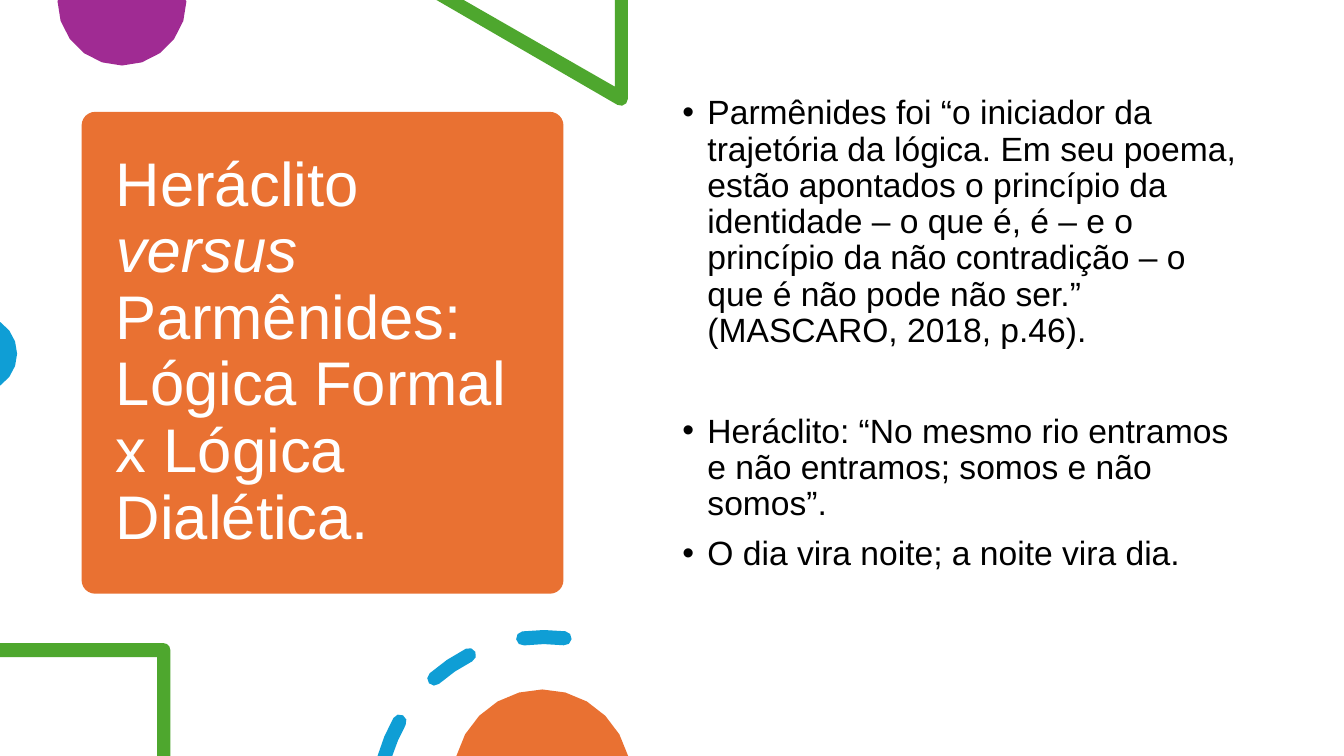
from math import cos, radians, sin
from lxml import etree
from pptx import Presentation
from pptx.dml.color import RGBColor
from pptx.enum.shapes import MSO_SHAPE
from pptx.enum.text import MSO_ANCHOR
from pptx.oxml.ns import qn
from pptx.util import Inches, Pt

ROUNDED = MSO_SHAPE.ROUNDED_RECTANGLE
MIDDLE = MSO_ANCHOR.MIDDLE
ORANGE, PURPLE, GREEN, BLUE = "E97132", "A02B93", "4EA72E", "0F9ED5"

deck = Presentation()
deck.slide_width, deck.slide_height = Inches(40 / 3), Inches(7.5)
slide = deck.slides.add_slide(deck.slide_layouts[6])
shapes = slide.shapes


def paint(shape, color):
    shape.shadow.inherit = False
    shape.fill.solid()
    shape.fill.fore_color.rgb = RGBColor.from_string(color)
    shape.line.fill.background()


def arc(x, y, radius, start, end, steps):
    """Points on a circle, in degrees clockwise from the right."""
    turns = [radians(start + (end - start) * i / steps) for i in range(steps + 1)]
    return [(x + radius * cos(t), y + radius * sin(t)) for t in turns]


# Title card
card = shapes.add_shape(ROUNDED, Inches(0.81), Inches(1.11), Inches(4.78), Inches(4.78))
card.adjustments[0] = 0.028
paint(card, ORANGE)

# Dashed ring: rounded ends, the first dash cut by the slide edge
ring_x, ring_y, ring_r, half = 5.4, 7.97, 1.65, 0.07
dashes = []
for start, end in [(None, 209.5), (228.6, 243.1), (262.7, 277)]:
    dash = arc(ring_x, ring_y, ring_r + half, start or 195.9, end, 2)
    tip = arc(ring_x, ring_y, ring_r, end, end, 1)[0]
    dash += arc(*tip, half, end, end + 180, 4)[1:-1]
    dash += arc(ring_x, ring_y, ring_r - half, end, start or 197.3, 2)
    if start:
        tail = arc(ring_x, ring_y, ring_r, start, start, 1)[0]
        dash += arc(*tail, half, start + 180, start + 360, 4)[1:-1]
    dashes.append(dash)

# Decorations along the slide edges
triangle = [(6.23, 0), (6.1, 0), (6.1, 0.86), (4.6, 0), (4.33, 0)]
triangle += arc(6.16, 0.98, 0.07, 120, 0, 3)
frame = [(0, 6.38), (0, 6.52), (1.56, 6.52), (1.56, 7.5), (1.69, 7.5)]
frame += arc(1.62, 6.45, 0.07, 0, -90, 3)
decor = [
    (PURPLE, [[(1.84, 0), (0.58, 0)] + arc(1.21, 0.01, 0.64, 180, 0, 10)]),
    (GREEN, [triangle]),
    (BLUE, [arc(-0.21, 3.51, 0.38, -56, 56, 6)]),
    (GREEN, [frame]),
    (BLUE, dashes),
    (ORANGE, [arc(5.38, 7.72, 0.88, 194.5, 345.5, 10)]),
]
for color, outlines in decor:
    pen = None
    for outline in outlines:
        points = [(Inches(x), Inches(y)) for x, y in outline]
        if pen is None:
            pen = shapes.build_freeform(*points[0])
        else:
            pen.move_to(*points[0])
        pen.add_line_segments(points[1:], close=True)
    paint(pen.convert_to_shape(), color)

# Title
title = shapes.add_textbox(Inches(1.05), Inches(1.22), Inches(4.31), Inches(4.56)).text_frame
title.word_wrap = True
title.vertical_anchor = MIDDLE
para = title.paragraphs[0]
para.line_spacing = 0.9
for text, slant in [
    ("Heráclito ", False),
    ("versus", True),
    (" Parmênides: Lógica Formal x Lógica Dialética.", False),
]:
    run = para.add_run()
    run.text = text
    run.font.italic = slant
para.font.name, para.font.size = "Arial", Pt(44)
para.font.color.rgb = RGBColor.from_string("FFFFFF")

# Bulleted text
body = shapes.add_textbox(Inches(6.67), Inches(0.9), Inches(5.75), Inches(5.35)).text_frame
body.word_wrap = True
items = [
    ("Parmênides foi “o iniciador da trajetória da lógica. Em seu poema, estão "
     "apontados o princípio da identidade – o que é, é – e o princípio da não "
     "contradição – o que é não pode não ser.” (MASCARO, 2018, p.46).", 0),
    ("Heráclito: “No mesmo rio entramos e não entramos; somos e não somos”.", 46),
    ("O dia vira noite; a noite vira dia.", 10),
]
for i, (text, gap) in enumerate(items):
    para = body.add_paragraph() if i else body.paragraphs[0]
    para.text = text
    para.line_spacing = 0.9
    para.space_before = Pt(gap)
    props = para._p.get_or_add_pPr()
    props.set("marL", str(Inches(0.25)))
    props.set("indent", str(Inches(-0.25)))
    etree.SubElement(props, qn("a:buFont")).set("typeface", "Arial")
    etree.SubElement(props, qn("a:buChar")).set("char", "•")
    para.font.name, para.font.size = "Arial", Pt(24)
    para.font.color.rgb = RGBColor.from_string("000000")

deck.save("out.pptx")
